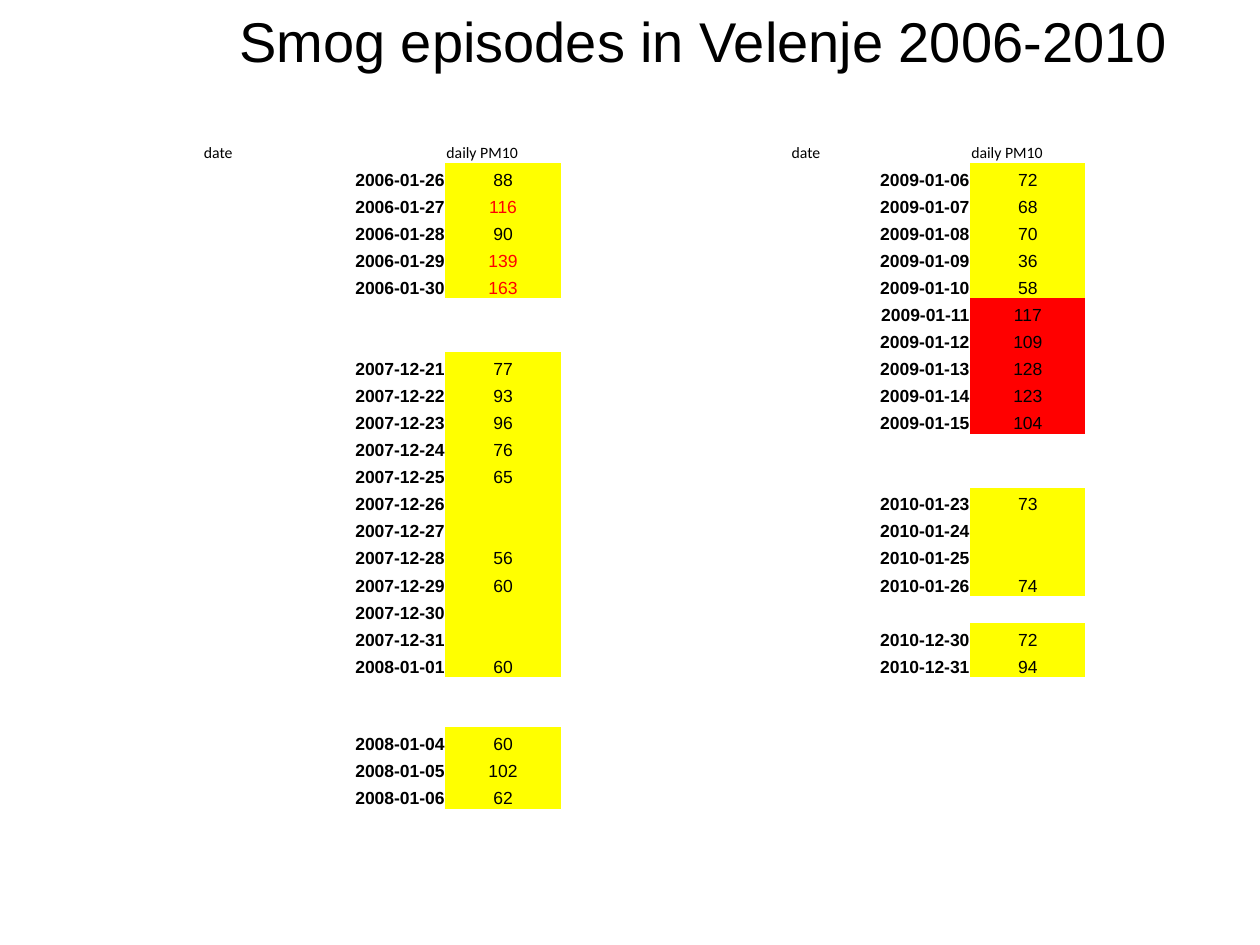
from dataclasses import dataclass

import pptx
import pptx.dml.color
import pptx.enum.text
import pptx.oxml.ns
import pptx.util
from lxml import etree

Cm = pptx.util.Cm
Align = pptx.enum.text.PP_ALIGN
Anchor = pptx.enum.text.MSO_ANCHOR
qn = pptx.oxml.ns.qn


@dataclass(frozen=True)
class Theme:
    ink: str = "000000"
    yellow: str = "FFFF00"
    red: str = "FF0000"
    body_font: str = "Arial"
    header_font: str = "Calibri"
    title_size: int = 32
    header_size: int = 9
    body_size: int = 10
    plain_table_style: str = "{2D5ABB26-0587-4C30-8999-92F81FD0307C}"


@dataclass(frozen=True)
class Episode:
    """Consecutive days in one month, placed from a given table row."""
    date_column: int
    first_row: int
    month: str
    first_day: int
    values: tuple
    fill: str = Theme.yellow
    red_values: tuple = ()


EPISODES = [
    Episode(0, 1, "2006-01", 26, (88, 116, 90, 139, 163), red_values=(116, 139, 163)),
    Episode(0, 8, "2007-12", 21, (77, 93, 96, 76, 65, "", "", 56, 60, "", "")),
    Episode(0, 19, "2008-01", 1, (60,)),
    Episode(0, 22, "2008-01", 4, (60, 102, 62)),
    Episode(4, 1, "2009-01", 6, (72, 68, 70, 36, 58)),
    Episode(4, 6, "2009-01", 11, (117, 109, 128, 123, 104), fill=Theme.red),
    Episode(4, 13, "2010-01", 23, (73, "", "", 74)),
    Episode(4, 18, "2010-12", 30, (72, 94)),
]
HEADERS = {0: "date", 1: "daily PM10", 4: "date", 5: "daily PM10"}
COLUMN_WIDTHS = [4.89, 2.32, 2.32, 2.32, 3.62, 2.32]
ROW_HEIGHTS = [0.97] + [0.545] * 19 + [0.51] * 2 + [0.545] * 3


class SlideBuilder:
    def __init__(self, slide, theme):
        self.slide = slide
        self.theme = theme

    def style_text(self, paragraph, size, font_name, color, align, bold=False):
        paragraph.alignment = align
        for run in paragraph.runs:
            run.font.size = pptx.util.Pt(size)
            run.font.name = font_name
            run.font.bold = bold
            run.font.color.rgb = pptx.dml.color.RGBColor.from_string(color)

    def title(self, text, left, top, width, height):
        text_frame = self.slide.shapes.add_textbox(
            Cm(left), Cm(top), Cm(width), Cm(height)).text_frame
        text_frame.word_wrap = True
        text_frame.vertical_anchor = Anchor.MIDDLE
        text_frame.text = text
        self.style_text(text_frame.paragraphs[0], self.theme.title_size,
                        self.theme.body_font, self.theme.ink, Align.CENTER)

    def table(self, left, top, column_widths, row_heights):
        table = self.slide.shapes.add_table(
            len(row_heights), len(column_widths), Cm(left), Cm(top),
            Cm(sum(column_widths)), Cm(sum(row_heights))).table
        table.first_row = table.horz_banding = False
        style = next(table._tbl.iter(qn("a:tableStyleId")))
        style.text = self.theme.plain_table_style
        for column, width in zip(table.columns, column_widths):
            column.width = Cm(width)
        for row, height in zip(table.rows, row_heights):
            row.height = Cm(height)
        for cell in table.iter_cells():
            cell.fill.background()
            cell.vertical_anchor = Anchor.BOTTOM
            cell.margin_left = cell.margin_right = cell.margin_top = Cm(0.02)
            cell.margin_bottom = 0
            # Small end mark keeps empty rows at their set height
            end_mark = etree.SubElement(cell.text_frame.paragraphs[0]._p,
                                        qn("a:endParaRPr"))
            end_mark.set("sz", str(self.theme.body_size * 100))
        return table

    def header_cell(self, cell, text):
        cell.text_frame.text = text
        self.style_text(cell.text_frame.paragraphs[0], self.theme.header_size,
                        self.theme.header_font, self.theme.ink, Align.LEFT)

    def body_cell(self, cell, text, align, bold=False, color=None, fill=None):
        if text:
            cell.text_frame.text = text
        self.style_text(cell.text_frame.paragraphs[0], self.theme.body_size,
                        self.theme.body_font, color or self.theme.ink, align, bold)
        if fill:
            cell.fill.solid()
            cell.fill.fore_color.rgb = pptx.dml.color.RGBColor.from_string(fill)

    def episode(self, table, episode):
        for offset, value in enumerate(episode.values):
            row = episode.first_row + offset
            date = f"{episode.month}-{episode.first_day + offset:02d}"
            color = self.theme.red if value in episode.red_values else self.theme.ink
            self.body_cell(table.cell(row, episode.date_column), date,
                           Align.RIGHT, bold=True)
            self.body_cell(table.cell(row, episode.date_column + 1), str(value),
                           Align.CENTER, color=color, fill=episode.fill)


def main():
    presentation = pptx.Presentation()
    presentation.slide_width = Cm(25.4)
    presentation.slide_height = Cm(19.05)
    slide = presentation.slides.add_slide(presentation.slide_layouts[6])
    builder = SlideBuilder(slide, Theme())

    # Title
    builder.title("Smog episodes in Velenje 2006-2010", 2.97, 0, 22.43, 1.6)

    # Table headings
    table = builder.table(4.09, 2.32, COLUMN_WIDTHS, ROW_HEIGHTS)
    table.cell(0, 1).merge(table.cell(0, 2))
    for column, text in HEADERS.items():
        builder.header_cell(table.cell(0, column), text)

    # Daily values
    for episode in EPISODES:
        builder.episode(table, episode)

    presentation.save("out.pptx")


if __name__ == "__main__":
    main()
